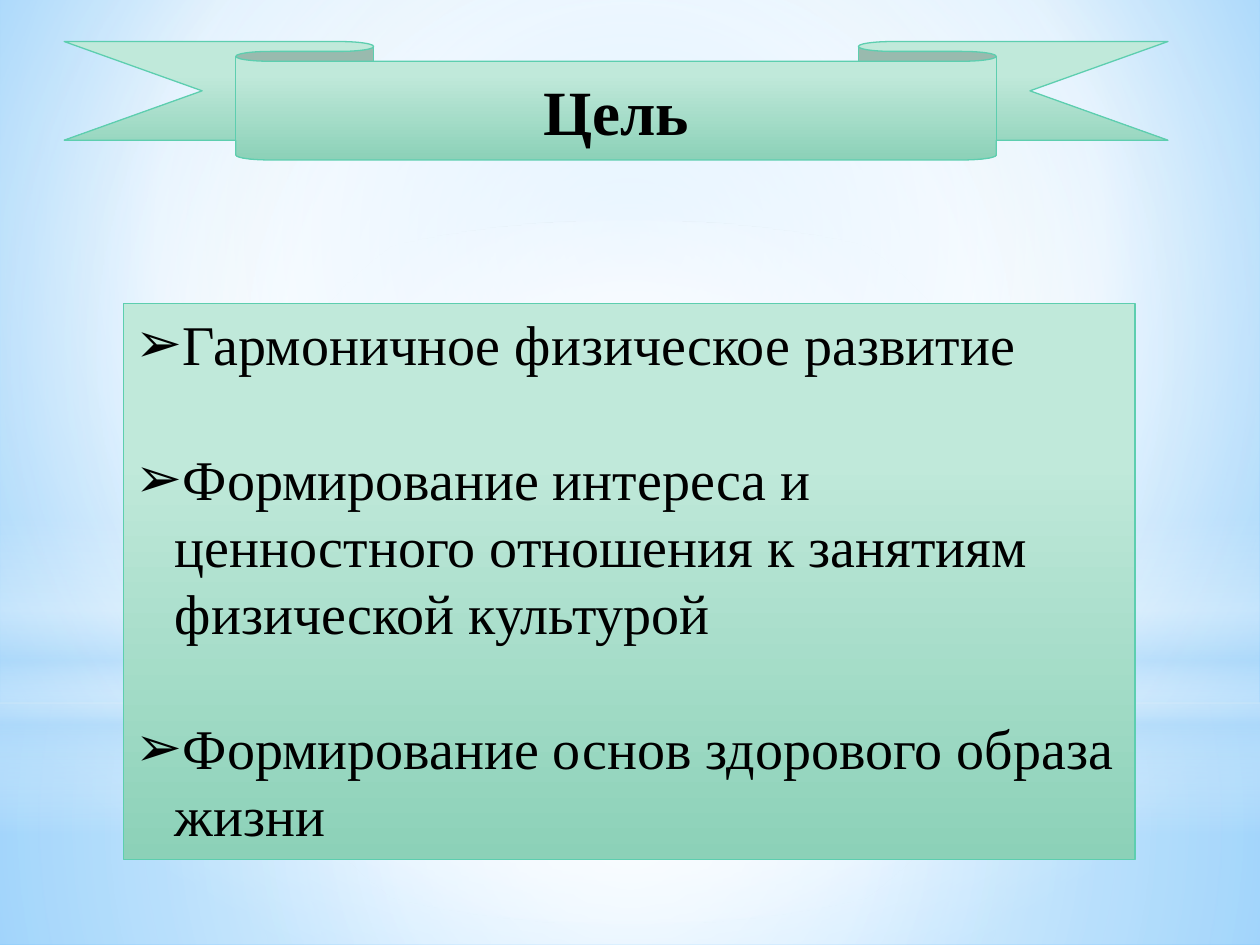
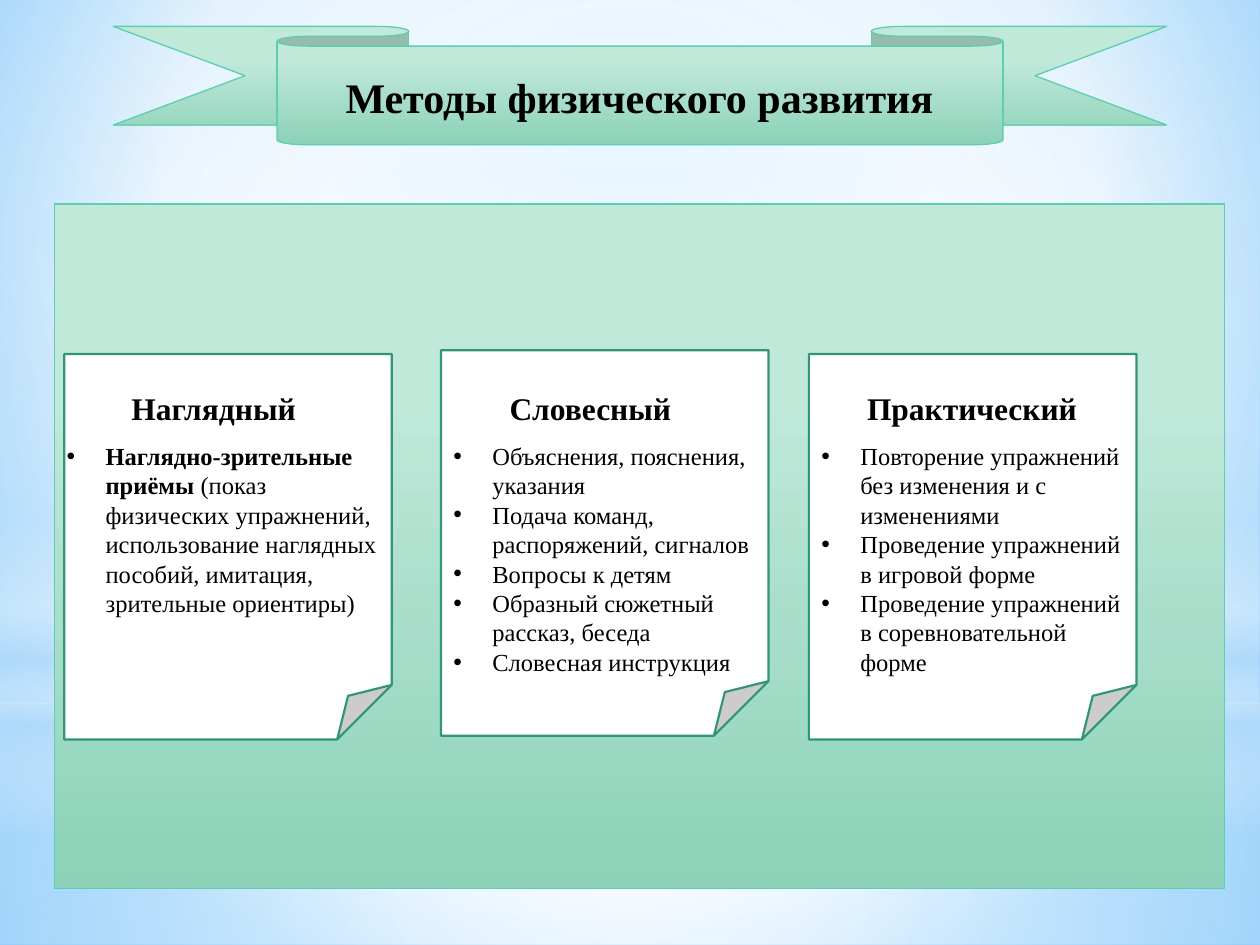
from lxml.etree import SubElement
from pptx import Presentation
from pptx.dml.color import RGBColor
from pptx.enum.shapes import MSO_SHAPE
from pptx.enum.text import MSO_ANCHOR, MSO_AUTO_SIZE, PP_ALIGN
from pptx.oxml.ns import qn
from pptx.util import Inches, Pt

WIDTH, HEIGHT = 10, 7.5
FONT = "Times New Roman"
INK, PAPER, PAPER_EDGE, GREEN_EDGE = "000000", "FFFFFF", "31957A", "5DCEAF"

# Gradient stops: position, colour, opacity (all but the colour in percent)
GREEN = [(28, "C0E9DA", 100), (100, "8CD1B8", 100)]
SKY = [(0, "9ED5FF", 100), (60, "FFFFFF", 100), (100, "5BB9FF", 100)]
SKY_FOCUS = (20, 10, 20, 60)
CENTRE = (50, 50, 50, 50)
HORIZON = 5.58
BACKDROP = [
    (MSO_SHAPE.RECTANGLE, (0, HORIZON, WIDTH, HEIGHT - HORIZON), CENTRE,
     [(0, "FFFFFF", 91), (37, "FFFFFF", 76), (100, "B4DCFA", 79)]),
    (MSO_SHAPE.RECTANGLE, (0, 0, WIDTH, HORIZON), CENTRE,
     [(0, "FFFFFF", 89), (48, "FFFFFF", 62), (100, "B4DCFA", 79)]),
    (MSO_SHAPE.RECTANGLE, (0, 4.12, WIDTH, 2.5), None,
     [(0, "FFFFFF", 0), (29, "FFFFFF", 30), (45, "B4DCFA", 40),
      (55, "FFFFFF", 26), (65, "B4DCFA", 60), (100, "FFFFFF", 0)]),
    (MSO_SHAPE.OVAL, (0, 1.75, WIDTH, HORIZON), CENTRE,
     [(0, "FFFFFF", 100), (56, "FFFFFF", 0)]),
]

GOAL_TITLE = "Цель"
GOALS = [
    "Гармоничное физическое развитие",
    "Формирование интереса и ценностного отношения к занятиям физической культурой",
    "Формирование основ здорового образа жизни",
]

METHODS_TITLE = "Методы физического развития"
CARD_WIDTH, CARD_HEIGHT = 2.6, 3.06
HEADING_TOP, HEADING_HEIGHT, LIST_TOP = 3.04, 0.4, 3.45
# "card" is left and top; "heading" and "list" are left and width
METHODS = [
    {"name": "Наглядный", "card": (0.51, 2.81), "heading": (0.75, 1.89),
     "list": (0.43, 2.68), "list_height": 1.51,
     "items": [[("Наглядно-зрительные приёмы ", True),
                ("(показ физических упражнений, использование наглядных "
                 "пособий, имитация, зрительные ориентиры)", False)]]},
    {"name": "Словесный", "card": (3.5, 2.78), "heading": (3.66, 2.05),
     "list": (3.5, 2.76), "list_height": 1.99,
     "items": ["Объяснения, пояснения, указания",
               "Подача команд, распоряжений, сигналов",
               "Вопросы к детям",
               "Образный сюжетный рассказ, беседа",
               "Словесная инструкция"]},
    {"name": "Практический", "card": (6.42, 2.81), "heading": (6.65, 2.13),
     "list": (6.42, 2.6), "list_height": 1.99,
     "items": ["Повторение упражнений без изменения и с изменениями",
               "Проведение упражнений в игровой форме",
               "Проведение упражнений в соревновательной форме"]},
]


def color(hex_code):
    return RGBColor.from_string(hex_code)


def paint_gradient(fill, properties, stops, focus=None):
    """Fill with a circular gradient around focus, or a vertical one without it."""
    fill.background()
    empty_fill = properties.find(qn("a:noFill"))
    gradient = SubElement(properties, qn("a:gradFill"), rotWithShape="1")
    properties.replace(empty_fill, gradient)
    stop_list = SubElement(gradient, qn("a:gsLst"))
    for position, hex_code, opacity in stops:
        stop = SubElement(stop_list, qn("a:gs"), pos=str(position * 1000))
        tint = SubElement(stop, qn("a:srgbClr"), val=hex_code)
        if opacity < 100:
            SubElement(tint, qn("a:alpha"), val=str(opacity * 1000))
    if focus:
        circle = SubElement(gradient, qn("a:path"), path="circle")
        sides = {side: str(share * 1000) for side, share in zip("ltrb", focus)}
        SubElement(circle, qn("a:fillToRect"), **sides)
    else:
        SubElement(gradient, qn("a:lin"), ang="5400000", scaled="0")


def add_box(page, kind, place, fill, focus=None, line=None, line_width=0.75):
    """Add a shape; fill is a hex colour or a list of gradient stops."""
    box = page.shapes.add_shape(kind, *map(Inches, place))
    box.shadow.inherit = False
    if isinstance(fill, str):
        box.fill.solid()
        box.fill.fore_color.rgb = color(fill)
    else:
        paint_gradient(box.fill, box.element.spPr, fill, focus)
    if line:
        box.line.color.rgb = color(line)
        box.line.width = Pt(line_width)
    else:
        box.line.fill.background()
    return box


def write(box, paragraphs, size, bold=False, align=PP_ALIGN.LEFT, bullet=None,
          gap=0, anchor=MSO_ANCHOR.TOP, grow=True):
    """Write paragraphs, each a string or a list of (text, bold) spans."""
    frame = box.text_frame
    frame.word_wrap = True
    frame.vertical_anchor = anchor
    if grow:
        frame.auto_size = MSO_AUTO_SIZE.SHAPE_TO_FIT_TEXT
    for index, content in enumerate(paragraphs):
        para = frame.add_paragraph() if index else frame.paragraphs[0]
        para.alignment = align
        if index and gap:
            para.space_before = Pt(gap)
        if bullet:
            properties = para._p.get_or_add_pPr()
            properties.set("marL", str(Inches(0.31)))
            properties.set("indent", str(-Inches(0.31)))
            SubElement(properties, qn("a:buFont"), typeface="Arial")
            SubElement(properties, qn("a:buChar"), char=bullet)
        spans = [(content, bold)] if isinstance(content, str) else content
        for text, is_bold in spans:
            span = para.add_run()
            span.text = text
            span.font.name = FONT
            span.font.size = Pt(size)
            span.font.bold = is_bold
            span.font.color.rgb = color(INK)


def add_text(page, place, paragraphs, size, **text_format):
    box = page.shapes.add_textbox(*map(Inches, place))
    write(box, paragraphs, size, **text_format)


def add_page(deck):
    """Add a blank page with the shared sky backdrop."""
    page = deck.slides.add_slide(deck.slide_layouts[6])
    for kind, place, focus, stops in BACKDROP:
        add_box(page, kind, place, stops, focus=focus)
    return page


def add_banner(page, left, top, width):
    banner = add_box(page, MSO_SHAPE.DOWN_RIBBON, (left, top, width, 0.94),
                     GREEN, line=GREEN_EDGE)
    banner.adjustments[0], banner.adjustments[1] = 0.167, 0.689
    return banner


def add_panel(page, *place):
    return add_box(page, MSO_SHAPE.RECTANGLE, place, GREEN, line=GREEN_EDGE)


def build_goal_page(deck):
    page = add_page(deck)
    banner = add_banner(page, 0.51, 0.33, 8.76)
    write(banner, [GOAL_TITLE], 36, bold=True, align=PP_ALIGN.CENTER,
          anchor=MSO_ANCHOR.MIDDLE, grow=False)
    panel = add_panel(page, 0.98, 2.41, 8.03, 4.41)
    write(panel, GOALS, 32, bullet="➢", gap=38.4)


def build_methods_page(deck):
    page = add_page(deck)
    add_banner(page, 0.9, 0.21, 8.36)
    add_text(page, (2.4, 0.52, 5.35, 0.5), [METHODS_TITLE], 24, bold=True,
             align=PP_ALIGN.CENTER)
    add_panel(page, 0.43, 1.62, 9.29, 5.43)
    for method in METHODS:
        add_box(page, MSO_SHAPE.FOLDED_CORNER,
                (*method["card"], CARD_WIDTH, CARD_HEIGHT), PAPER,
                line=PAPER_EDGE, line_width=1.25)
        left, width = method["heading"]
        add_text(page, (left, HEADING_TOP, width, HEADING_HEIGHT),
                 [method["name"]], 18, bold=True, align=PP_ALIGN.CENTER)
        left, width = method["list"]
        add_text(page, (left, LIST_TOP, width, method["list_height"]),
                 method["items"], 14, bullet="•")


def main():
    deck = Presentation()
    deck.slide_width, deck.slide_height = Inches(WIDTH), Inches(HEIGHT)
    master = deck.slide_master
    sky = master.background.fill
    sky.background()
    paint_gradient(sky, master.element.find(".//" + qn("p:bgPr")), SKY, SKY_FOCUS)
    build_goal_page(deck)
    build_methods_page(deck)
    deck.save("out.pptx")


if __name__ == "__main__":
    main()
